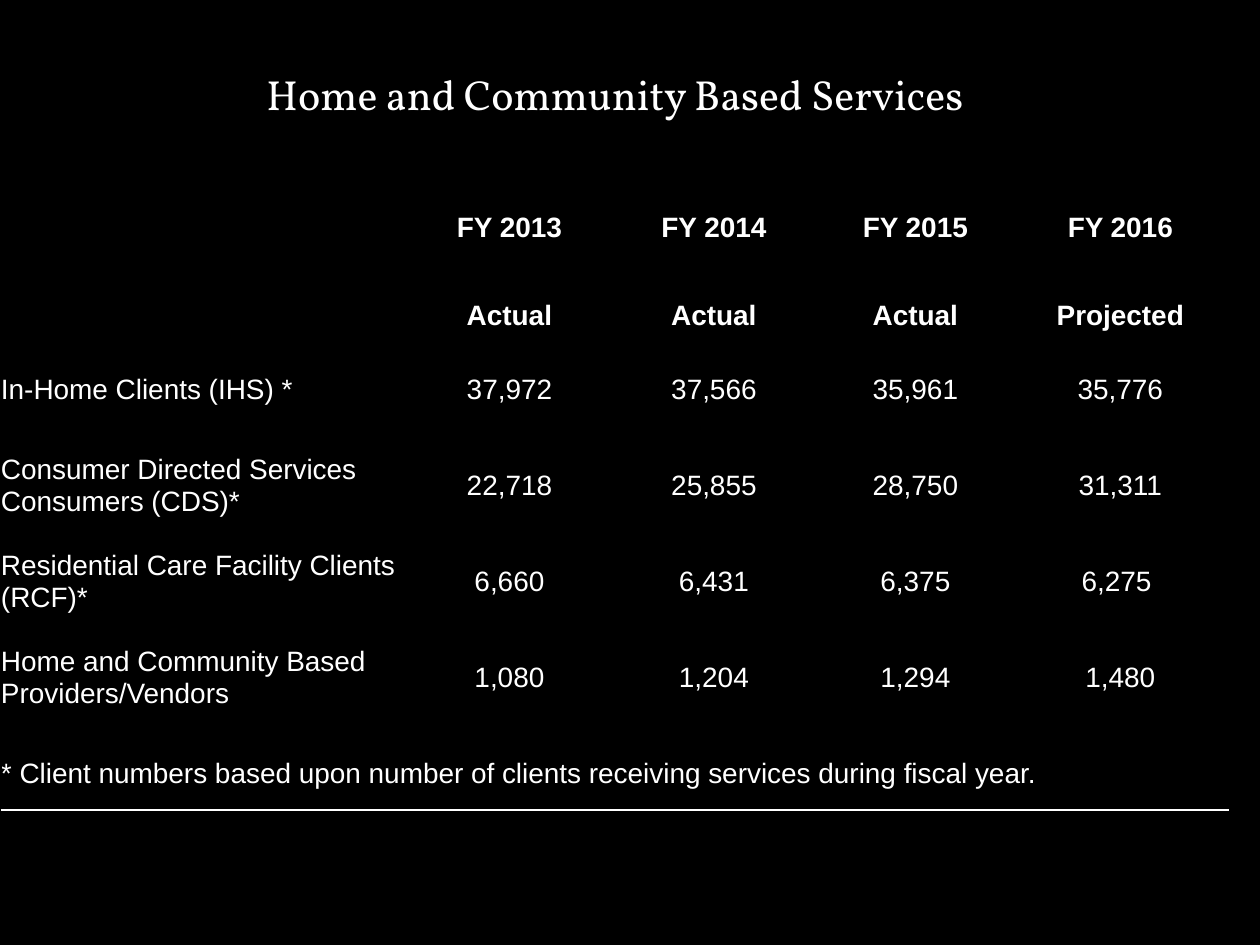
from lxml import etree
from pptx import Presentation
from pptx.dml.color import RGBColor
from pptx.enum.text import MSO_ANCHOR, PP_ALIGN
from pptx.oxml.ns import qn
from pptx.util import Pt

MID = MSO_ANCHOR.MIDDLE
LEFT, CENTER = PP_ALIGN.LEFT, PP_ALIGN.CENTER
PX = 914400 // 126
BLACK, WHITE = "000000", "FFFFFF"

TITLE = "Home and Community Based Services"
HEADS = [
    ("", "FY 2013", "FY 2014", "FY 2015", "FY 2016"),
    ("", "Actual", "Actual", "Actual", "Projected"),
]
BODY = [
    ("In-Home Clients (IHS) *", "37,972", "37,566", "35,961", "35,776"),
    ("Consumer Directed Services Consumers (CDS)*", "22,718", "25,855", "28,750", "31,311"),
    ("Residential Care Facility Clients (RCF)*", "6,660", "6,431", "6,375", "6,275 "),
    ("Home and Community Based Providers/Vendors", "1,080", "1,204", "1,294", "1,480"),
]
NOTE = "* Client numbers based upon number of clients receiving services during fiscal year."

COLS = [362, 47, 199, 210, 193, 217]
ROWS = [157, 100, 76, 72, 120, 72, 120, 72]
LAST = len(ROWS) - 1

PLAIN = {"name": "Arial", "size": Pt(16), "bold": False}
BOLD = {**PLAIN, "bold": True}
HERO = {"name": "Vollkorn", "size": Pt(24), "bold": False}
CELL = {"margin_left": 0, "margin_right": 0, "margin_top": 0,
        "margin_bottom": 0, "vertical_anchor": MID}


def color(code):
    return RGBColor.from_string(code)


def style(item, form):
    for key, val in form.items():
        setattr(item, key, val)


def edge(cell, side, code, width):
    props = cell._tc.get_or_add_tcPr()
    line = etree.SubElement(props, qn("a:ln" + side), w=str(Pt(width)))
    fill = etree.SubElement(line, qn("a:solidFill"))
    etree.SubElement(fill, qn("a:srgbClr"), val=code)


def write(cell, text, form, align):
    para = cell.text_frame.paragraphs[0]
    para.alignment = align
    run = para.add_run()
    run.text = text
    style(run.font, form)
    run.font.color.rgb = color(WHITE)


def main():
    deck = Presentation()
    deck.slide_width, deck.slide_height = 1260 * PX, 945 * PX
    slide = deck.slides.add_slide(deck.slide_layouts[6])
    back = slide.background.fill
    back.solid()
    back.fore_color.rgb = color(BLACK)

    frame = slide.shapes.add_table(len(ROWS), len(COLS), PX, 21 * PX,
                                   sum(COLS) * PX, sum(ROWS) * PX)
    table = frame.table
    style(table, {"first_row": False, "horz_banding": False})
    for col, wide in zip(table.columns, COLS):
        col.width = wide * PX
    for row, (line, high) in enumerate(zip(table.rows, ROWS)):
        line.height = high * PX
        for cell in line.cells:
            style(cell, CELL)
            for side in "LRTB":
                rule = row == LAST and side == "B"
                edge(cell, side, WHITE if rule else BLACK, 1 if rule else 0.5)
            cell.fill.background()

    for row, end in [(0, 5), (LAST, 5)] + [(r, 1) for r in range(3, LAST)]:
        table.cell(row, 0).merge(table.cell(row, end))

    write(table.cell(0, 0), TITLE, HERO, CENTER)
    write(table.cell(LAST, 0), NOTE, PLAIN, LEFT)
    for row, (label, *vals) in enumerate(HEADS + BODY, 1):
        if label:
            write(table.cell(row, 0), label, PLAIN, LEFT)
        form = BOLD if row <= len(HEADS) else PLAIN
        for col, val in enumerate(vals, 2):
            write(table.cell(row, col), val, form, CENTER)

    deck.save("out.pptx")


if __name__ == "__main__":
    main()
